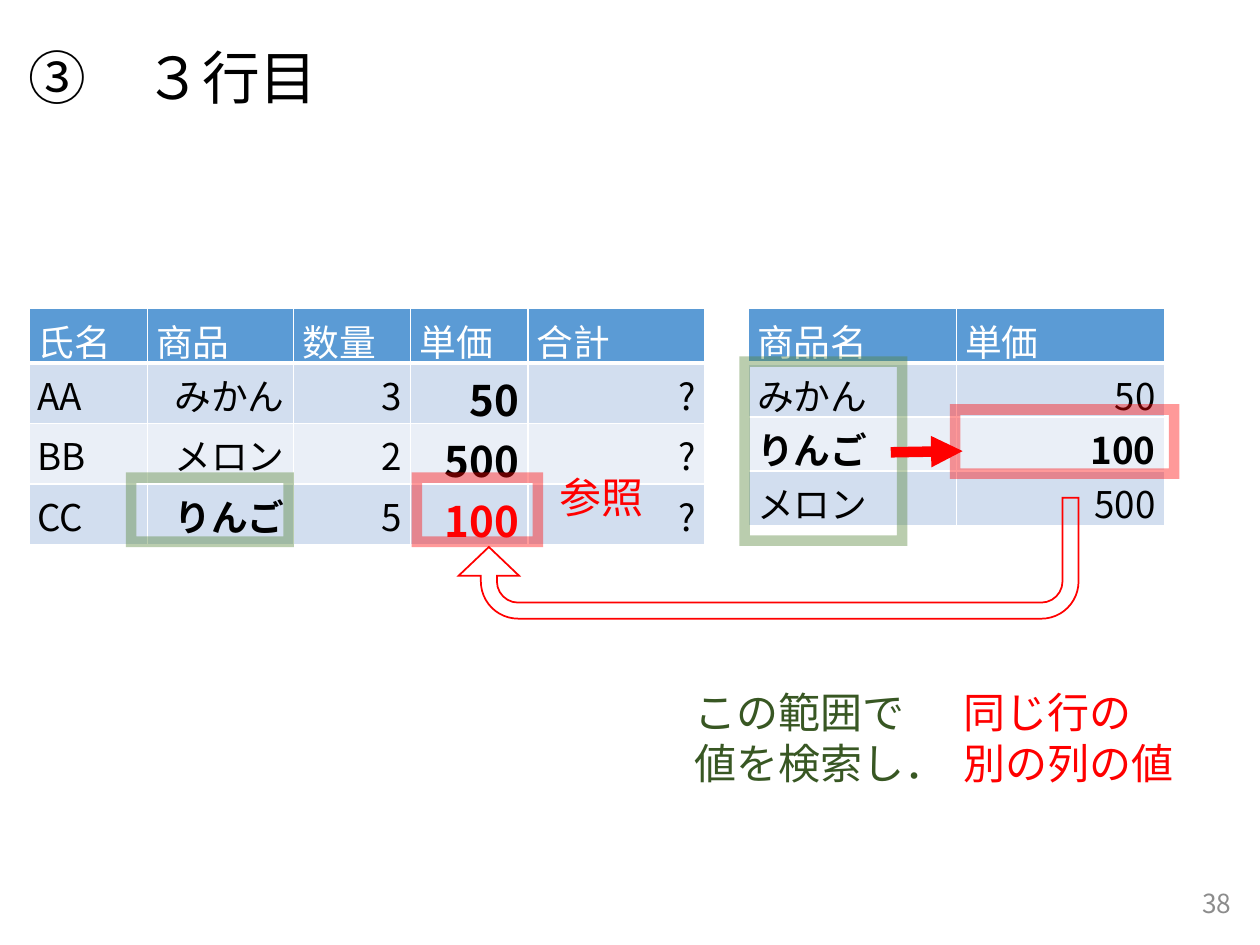
from dataclasses import dataclass

import pptx
import pptx.dml.color
import pptx.enum.dml
import pptx.enum.shapes
import pptx.enum.text
import pptx.oxml
import pptx.oxml.ns
import pptx.util
from pptx.util import Inches

RGB = pptx.dml.color.RGBColor.from_string
SHAPE = pptx.enum.shapes.MSO_SHAPE
ALIGN = pptx.enum.text.PP_ALIGN
ANCHOR = pptx.enum.text.MSO_ANCHOR
FIT = pptx.enum.text.MSO_AUTO_SIZE
NS = pptx.oxml.ns.nsdecls("a")


@dataclass(frozen=True)
class Theme:
    title_font: str = "Cabin"
    font: str = "Noto Sans CJK JP"
    title: int = 33
    note: int = 24
    cell: int = 21
    number: int = 15
    black: str = "000000"
    white: str = "FFFFFF"
    gray: str = "8C8C8C"
    red: str = "FF0000"
    green: str = "548235"
    dark_green: str = "385723"
    header: str = "5B9BD5"
    bands: tuple = ("D2DEEF", "EAEFF7")


THEME = Theme()


@dataclass(frozen=True)
class Box:
    left: float
    top: float
    width: float
    height: float

    def emu(self) -> tuple:
        return tuple(map(Inches, (self.left, self.top, self.width, self.height)))


@dataclass(frozen=True)
class Grid:
    box: Box
    columns: tuple
    heights: tuple
    rows: tuple
    left_columns: int  # body columns aligned left
    formats: dict  # (row, column) -> font values


@dataclass(frozen=True)
class Frame:
    box: Box
    color: str


@dataclass(frozen=True)
class Note:
    box: Box
    lines: tuple
    color: str


BIG = {"size": THEME.note, "bold": True}
PRICES = Grid(
    Box(5.94, 2.45, 3.29, 1.7), (1.65, 1.65), (0.42,) * 4,
    (("商品名", "単価"), ("みかん", "50"), ("りんご", "100"), ("メロン", "500")),
    1, {(2, 0): {"bold": True}, (2, 1): {"bold": True}})
ORDERS = Grid(
    Box(0.23, 2.45, 5.36, 1.85), (0.94, 1.16, 0.93, 0.93, 1.4), (0.42, 0.47, 0.47, 0.47),
    (("氏名", "商品", "数量", "単価", "合計"),
     ("AA", "みかん", "3", "50", "?"),
     ("BB", "メロン", "2", "500", "?"),
     ("CC", "りんご", "5", "100", "?")),
    1, {(1, 3): BIG, (2, 3): BIG, (3, 1): {"bold": True},
        (3, 3): {**BIG, "color": THEME.red}})
FRAMES = (
    Frame(Box(7.58, 3.25, 1.74, 0.51), THEME.red),
    Frame(Box(3.31, 3.79, 0.96, 0.51), THEME.red),
    Frame(Box(1.04, 3.79, 1.25, 0.51), THEME.green),
    Frame(Box(5.91, 2.87, 1.25, 1.42), THEME.green),
)
NOTES = (
    Note(Box(5.41, 5.4, 2.22, 0.91), ("この範囲で", "値を検索し．"), THEME.dark_green),
    Note(Box(7.55, 5.4, 1.88, 0.91), ("同じ行の", "別の列の値"), THEME.red),
    Note(Box(4.34, 3.69, 0.88, 0.5), ("参照",), THEME.red),
)


def add_run(p, text: str, size: int, color: str, name: str = THEME.font,
            bold: bool = False) -> None:
    r = p.add_run()
    r.text = text
    values = {"size": pptx.util.Pt(size), "name": name, "bold": bold}
    for key, value in values.items():
        setattr(r.font, key, value)
    r.font.color.rgb = RGB(color)
    latin = r.font._element.find(pptx.oxml.ns.qn("a:latin"))
    latin.addnext(pptx.oxml.parse_xml(f'<a:ea {NS} typeface="{THEME.font}"/>'))


def set_borders(cell, bottom: int) -> None:
    tc_pr = cell._tc.get_or_add_tcPr()
    for i, (side, width) in enumerate(zip("LRTB", (1, 1, 1, bottom))):
        tc_pr.insert(i, pptx.oxml.parse_xml(
            f'<a:ln{side} {NS} w="{pptx.util.Pt(width)}"><a:solidFill>'
            f'<a:srgbClr val="{THEME.white}"/></a:solidFill></a:ln{side}>'))


def add_grid(s, grid: Grid) -> None:
    table = s.shapes.add_table(len(grid.rows), len(grid.columns), *grid.box.emu()).table
    table.horz_banding = table.first_row = False
    for column, width in zip(table.columns, grid.columns):
        column.width = Inches(width)
    for row, height in zip(table.rows, grid.heights):
        row.height = Inches(height)
    margins = {"margin_left": 0.07, "margin_right": 0.07,
               "margin_top": 0.04, "margin_bottom": 0.04}
    for i, texts in enumerate(grid.rows):
        for j, text in enumerate(texts):
            cell = table.cell(i, j)
            for key, value in margins.items():
                setattr(cell, key, Inches(value))
            cell.fill.solid()
            cell.fill.fore_color.rgb = RGB(THEME.bands[(i - 1) % 2] if i else THEME.header)
            set_borders(cell, 1 if i else 3)
            p = cell.text_frame.paragraphs[0]
            p.alignment = ALIGN.RIGHT if i and j >= grid.left_columns else ALIGN.LEFT
            base = {"size": THEME.cell, "color": THEME.black if i else THEME.white}
            add_run(p, text, **{**base, **grid.formats.get((i, j), {})})


def add_outline(s, kind, box: Box, color: str, width: float):
    sp = s.shapes.add_shape(kind, *box.emu())
    sp.shadow.inherit = False
    sp.fill.background()
    sp.line.color.rgb = RGB(color)
    sp.line.width = pptx.util.Pt(width)
    ln = sp.line._get_or_add_ln()
    ln.append(pptx.oxml.parse_xml(f'<a:miter {NS} lim="800000"/>'))
    return sp


def add_frame(s, frame: Frame) -> None:
    """Draw a highlight frame with a 40 % opaque line."""
    sp = add_outline(s, SHAPE.RECTANGLE, frame.box, frame.color, 6)
    color = sp.line._get_or_add_ln().find(".//" + pptx.oxml.ns.qn("a:srgbClr"))
    color.append(pptx.oxml.parse_xml(f'<a:alpha {NS} val="40000"/>'))


def add_arrow(s, start: tuple, end: tuple) -> None:
    c = s.shapes.add_connector(pptx.enum.shapes.MSO_CONNECTOR.STRAIGHT,
                               *map(Inches, start + end))
    c.line.color.rgb = RGB(THEME.red)
    c.line.width = pptx.util.Pt(6)
    c.line._get_or_add_ln().append(pptx.oxml.parse_xml(f'<a:tailEnd {NS} type="triangle"/>'))
    c._element.spPr.append(pptx.oxml.parse_xml(f"<a:effectLst {NS}/>"))


def add_return_arrow(s) -> None:
    """Draw the U-turn arrow from the found price back to the order."""
    sp = add_outline(s, SHAPE.U_TURN_ARROW, Box(3.64, 3.95, 4.92, 0.96), THEME.red, 1)
    sp.rotation = 180
    for i, value in enumerate((0.133, 0.25, 0.238, 0.308, 0.593)):
        sp.adjustments[i] = value


def add_note(s, note: Note) -> None:
    tf = s.shapes.add_textbox(*note.box.emu()).text_frame
    tf.word_wrap = False
    tf.auto_size = FIT.SHAPE_TO_FIT_TEXT
    for i, line in enumerate(note.lines):
        p = tf.add_paragraph() if i else tf.paragraphs[0]
        add_run(p, line, THEME.note, note.color)


def add_title(s, text: str) -> None:
    sp = s.shapes.title
    sp.left, sp.top, sp.width, sp.height = Box(0.13, 0.21, 9.65, 0.86).emu()
    sp.text_frame.vertical_anchor = ANCHOR.MIDDLE
    p = sp.text_frame.paragraphs[0]
    p.alignment, p.line_spacing = ALIGN.LEFT, 0.9
    add_run(p, text, THEME.title, THEME.black, THEME.title_font)


def add_slide_number(s, text: str) -> None:
    tf = s.shapes.add_textbox(*Box(7.62, 6.97, 2.25, 0.4).emu()).text_frame
    tf.word_wrap, tf.vertical_anchor = True, ANCHOR.MIDDLE
    p = tf.paragraphs[0]
    p.alignment = ALIGN.RIGHT
    add_run(p, text, THEME.number, THEME.gray)


def main() -> None:
    prs = pptx.Presentation()
    prs.slide_width, prs.slide_height = Inches(10), Inches(7.5)
    s = prs.slides.add_slide(prs.slide_layouts[5])
    add_title(s, "③　３行目")
    add_slide_number(s, "38")
    for grid in (PRICES, ORDERS):
        add_grid(s, grid)
    for frame in FRAMES:
        add_frame(s, frame)
    add_arrow(s, (7.07, 3.59), (7.64, 3.58))
    add_return_arrow(s)
    for note in NOTES:
        add_note(s, note)
    prs.save("out.pptx")


if __name__ == "__main__":
    main()
